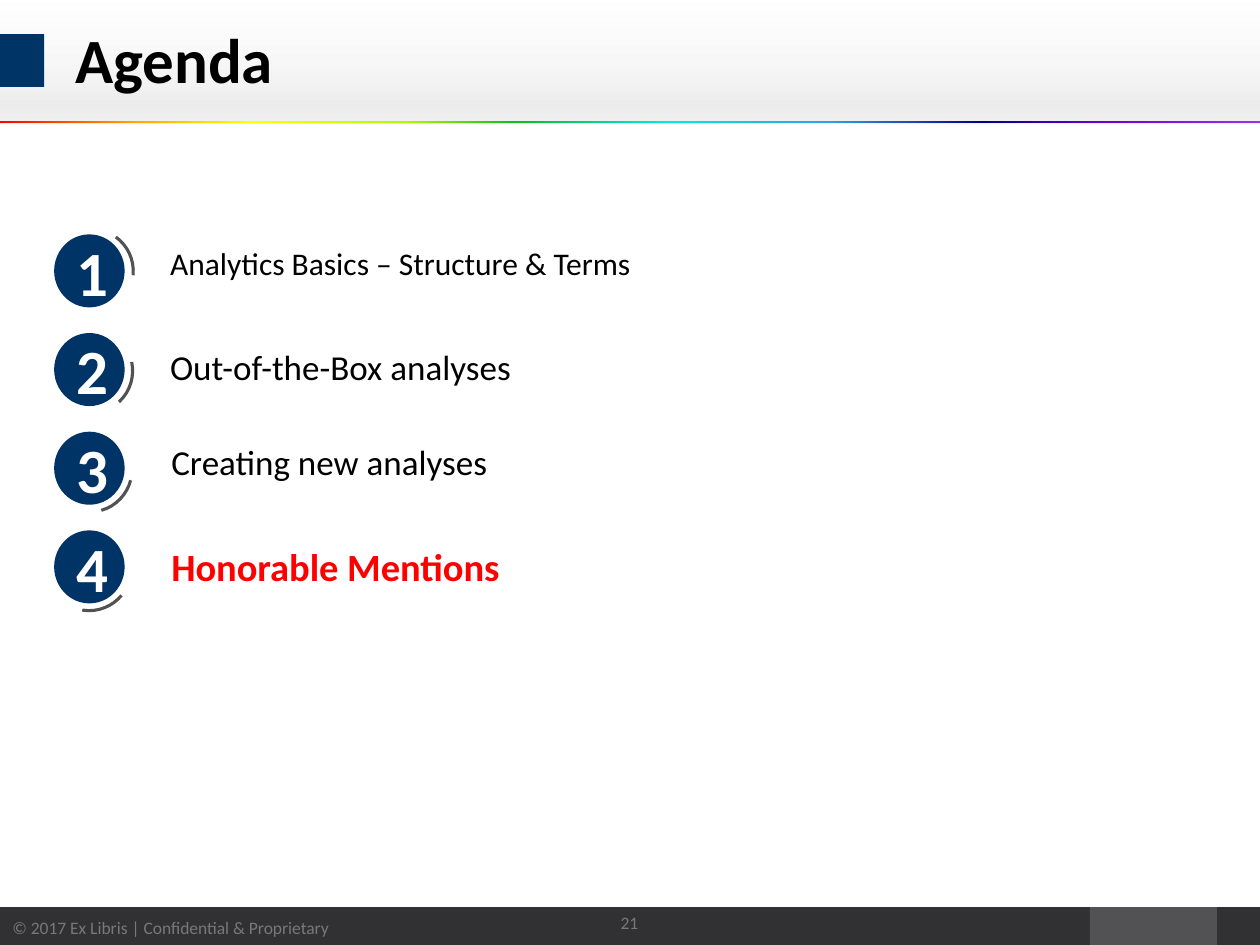
"""Build the Agenda slide with four numbered topics."""
from dataclasses import dataclass

from lxml import etree
from pptx import Presentation
from pptx.dml.color import RGBColor
from pptx.enum.shapes import MSO_SHAPE
from pptx.enum.text import MSO_ANCHOR, PP_ALIGN
from pptx.oxml.ns import qn
from pptx.util import Inches, Pt

RECT, OVAL, ARC = MSO_SHAPE.RECTANGLE, MSO_SHAPE.OVAL, MSO_SHAPE.BLOCK_ARC
LEFT, CENTER = PP_ALIGN.LEFT, PP_ALIGN.CENTER
MIDDLE = MSO_ANCHOR.MIDDLE


@dataclass(frozen=True)
class Theme:
    font: str = "Calibri"
    navy: str = "003466"
    dark: str = "313133"
    gray: str = "525254"
    muted: str = "787878"
    white: str = "FFFFFF"
    black: str = "000000"
    red: str = "FF0000"
    heading: int = 36
    large: int = 22
    body: int = 20
    compact: int = 18
    small: int = 10
    header: tuple = ((0, "FAFAFA", 12), (66, "D7D7D7", 30),
                     (83, "D7D7D7", 47), (100, "E4E4E4", 54))
    rainbow: tuple = ((0, "A22DE8", 100), (12, "7200D1", 100), (22, "000086", 100),
                      (34, "399CDB", 100), (47, "00E9E8", 100), (59, "11B920", 100),
                      (68, "B1F900", 100), (80, "FFFF00", 100), (89, "FFAB00", 100),
                      (100, "FF0000", 100))


def add_shape(shapes, kind, box, fill, angle=0):
    sp = shapes.add_shape(kind, *map(Inches, box))
    sp.shadow.inherit = False
    sp.line.fill.background()
    if isinstance(fill, str):
        sp.fill.solid()
        sp.fill.fore_color.rgb = RGBColor.from_string(fill)
        return sp
    sp.fill.gradient()
    grad = sp._element.spPr.find(qn("a:gradFill"))
    stops = grad.find(qn("a:gsLst"))
    for stop in list(stops):
        stops.remove(stop)
    for position, color, opacity in fill:
        stop = etree.SubElement(stops, qn("a:gs"), pos=str(position * 1000))
        rgb = etree.SubElement(stop, qn("a:srgbClr"), val=color)
        etree.SubElement(rgb, qn("a:alpha"), val=str(opacity * 1000))
    grad.find(qn("a:lin")).set("ang", str(angle * 60000))
    return sp


def write(sp, text, size, color, bold=False, align=LEFT, inset=None):
    tf = sp.text_frame
    tf.word_wrap = True
    tf.vertical_anchor = MIDDLE
    if inset is not None:
        tf.margin_left = tf.margin_right = Inches(inset)
        tf.margin_top = tf.margin_bottom = Inches(inset)
    p = tf.paragraphs[0]
    p.alignment = align
    r = p.add_run()
    r.text = text
    r.font.name = theme.font
    r.font.size = Pt(size)
    r.font.bold = bold
    r.font.color.rgb = RGBColor.from_string(color)
    return p


theme = Theme()
prs = Presentation()
prs.slide_width, prs.slide_height = Inches(10), Inches(7.5)
s = prs.slides.add_slide(prs.slide_layouts[6])

footer = add_shape(s.shapes, RECT, (0, 7.2, 8.65, 0.32), theme.dark)
write(footer, "© 2017 Ex Libris | Confidential & Proprietary", theme.small, theme.muted)
add_shape(s.shapes, RECT, (8.65, 7.2, 1.01, 0.32), theme.gray)
add_shape(s.shapes, RECT, (9.66, 7.2, 0.35, 0.32), theme.dark)
add_shape(s.shapes, RECT, (-0.01, 0.02, 10.01, 0.96), theme.header, 90)
add_shape(s.shapes, RECT, (0, 0.27, 0.35, 0.42), theme.navy)
add_shape(s.shapes, RECT, (0, 0.96, 10, 0.02), theme.rainbow, 180)

title = s.shapes.add_textbox(Inches(0.5), Inches(0.08), Inches(9.07), Inches(0.84))
p = write(title, "Agenda", theme.heading, theme.black, bold=True)
p.line_spacing = 0.9
number = s.shapes.add_textbox(Inches(4.7), Inches(7.06), Inches(0.59), Inches(0.53))
write(number, "21", theme.small, theme.muted, align=CENTER)

topics = [
    ("Analytics Basics – Structure & Terms", 1.3, 1.86, theme.compact, theme.black, False, 5.1),
    ("Out-of-the-Box analyses", 1.3, 2.68, theme.body, theme.black, False, 47),
    ("Creating new analyses", 1.31, 3.43, theme.body, theme.black, False, 73.5),
    ("Honorable Mentions", 1.31, 4.26, theme.large, theme.red, True, 98.8),
]
for i, (text, left, top, size, color, bold, rotation) in enumerate(topics):
    y = 1.82 + 0.783 * i
    badge = s.shapes.add_group_shape()
    add_shape(badge.shapes, OVAL, (0.38, y, 0.65, 0.66), theme.white)
    arc = add_shape(badge.shapes, ARC, (0.35, y - 0.02, 0.72, 0.7), theme.gray)
    arc.rotation = rotation
    for j, value in enumerate((181.73, 0.42, 0.035)):
        arc.adjustments[j] = value
    disc = add_shape(badge.shapes, OVAL, (0.43, y + 0.04, 0.56, 0.58), theme.navy)
    write(disc, str(i + 1), theme.heading, theme.white, bold=True, align=CENTER)
    label = s.shapes.add_textbox(Inches(left), Inches(top), Inches(3.94), Inches(0.46))
    write(label, text, size, color, bold=bold, inset=0.05)

prs.save("out.pptx")
